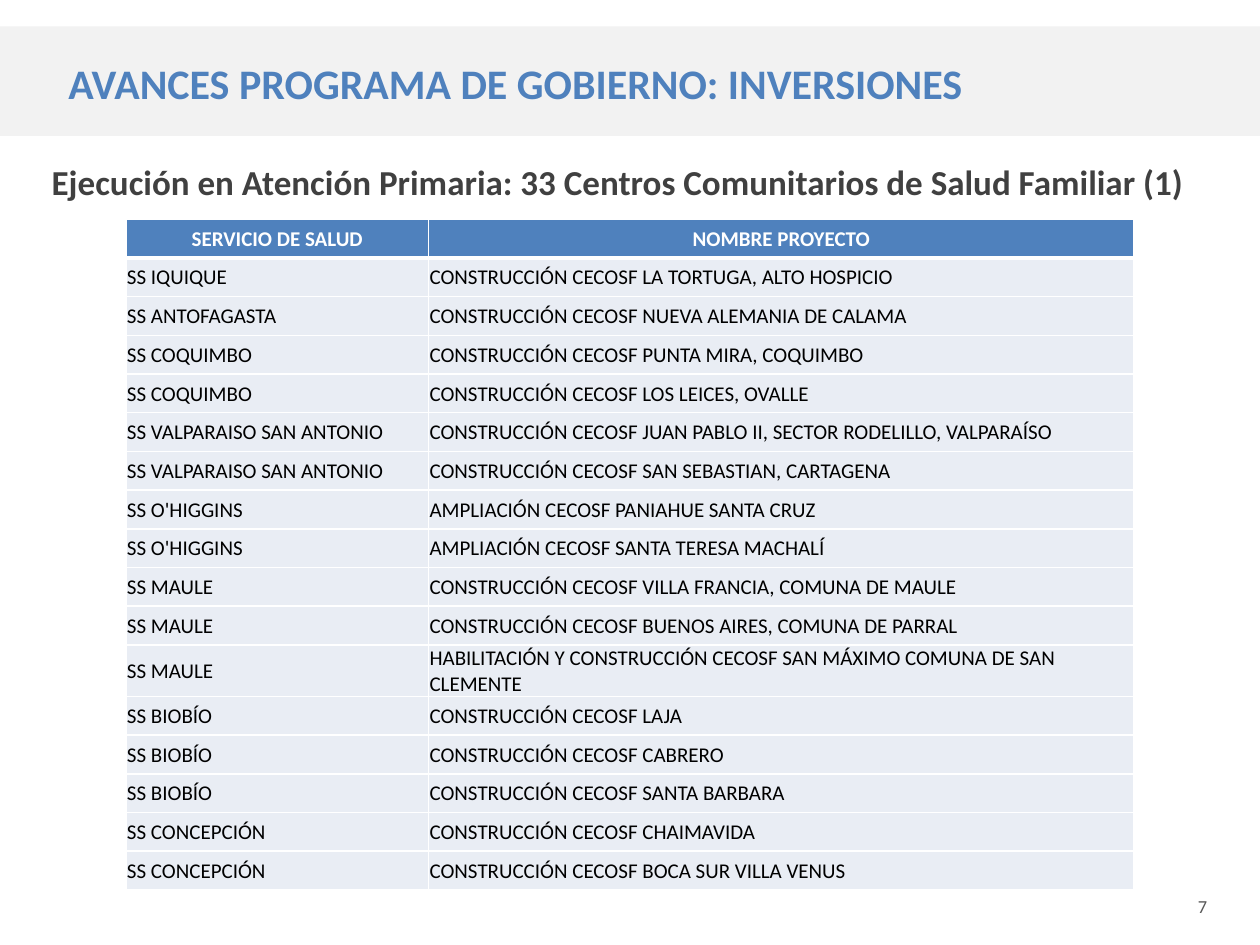
from typing import NamedTuple

from lxml.etree import SubElement
from pptx import Presentation
from pptx.dml.color import RGBColor
from pptx.enum.text import MSO_ANCHOR, MSO_AUTO_SIZE, PP_ALIGN
from pptx.oxml.ns import qn
from pptx.util import Cm, Pt

BLUE = RGBColor(0x4F, 0x81, 0xBD)
PALE = RGBColor(0xE9, 0xED, 0xF4)
BAND = RGBColor(0xF2, 0xF2, 0xF2)
DARK = RGBColor(0x40, 0x40, 0x40)
GRAY = RGBColor(0x59, 0x59, 0x59)
BLACK = RGBColor(0, 0, 0)
WHITE = RGBColor(0xFF, 0xFF, 0xFF)

ROW = 0.78
TALL = 1.04  # a row whose project name takes two lines
WRAP = 64  # letters that fit on one line of the project column


class Work(NamedTuple):
    service: str
    project: str


HEAD = Work("SERVICIO DE SALUD", "NOMBRE PROYECTO")
WORKS = [
    Work("SS IQUIQUE", "CONSTRUCCIÓN CECOSF LA TORTUGA, ALTO HOSPICIO"),
    Work("SS ANTOFAGASTA", "CONSTRUCCIÓN CECOSF NUEVA ALEMANIA DE CALAMA"),
    Work("SS COQUIMBO", "CONSTRUCCIÓN CECOSF PUNTA MIRA, COQUIMBO"),
    Work("SS COQUIMBO", "CONSTRUCCIÓN CECOSF LOS LEICES, OVALLE"),
    Work("SS VALPARAISO SAN ANTONIO",
         "CONSTRUCCIÓN CECOSF JUAN PABLO II, SECTOR RODELILLO, VALPARAÍSO"),
    Work("SS VALPARAISO SAN ANTONIO", "CONSTRUCCIÓN CECOSF SAN SEBASTIAN, CARTAGENA"),
    Work("SS O'HIGGINS", "AMPLIACIÓN CECOSF PANIAHUE SANTA CRUZ"),
    Work("SS O'HIGGINS", "AMPLIACIÓN CECOSF SANTA TERESA MACHALÍ"),
    Work("SS MAULE", "CONSTRUCCIÓN CECOSF VILLA FRANCIA, COMUNA DE MAULE"),
    Work("SS MAULE", "CONSTRUCCIÓN CECOSF BUENOS AIRES, COMUNA DE PARRAL"),
    Work("SS MAULE",
         "HABILITACIÓN Y CONSTRUCCIÓN CECOSF SAN MÁXIMO COMUNA DE SAN CLEMENTE"),
    Work("SS BIOBÍO", "CONSTRUCCIÓN CECOSF LAJA"),
    Work("SS BIOBÍO", "CONSTRUCCIÓN CECOSF CABRERO"),
    Work("SS BIOBÍO", "CONSTRUCCIÓN CECOSF SANTA BARBARA"),
    Work("SS CONCEPCIÓN", "CONSTRUCCIÓN CECOSF CHAIMAVIDA"),
    Work("SS CONCEPCIÓN", "CONSTRUCCIÓN CECOSF BOCA SUR VILLA VENUS"),
]


def write(frame, text: str, *, size: float, color: RGBColor, bold: bool = False,
          align: PP_ALIGN = PP_ALIGN.LEFT) -> None:
    frame.text = text
    para = frame.paragraphs[0]
    para.alignment = align
    para.space_before = Pt(0)
    font = para.runs[0].font
    font.name, font.size, font.bold = "Calibri", Pt(size), bold
    font.color.rgb = color


def rule(cell, base: float) -> None:
    """Draw white lines round a cell; base is the width of the lower one."""
    props = cell._tc.get_or_add_tcPr()
    for side, width in (("L", 1), ("R", 1), ("T", 1), ("B", base)):
        line = SubElement(props, qn(f"a:ln{side}"), w=str(Pt(width)))
        SubElement(SubElement(line, qn("a:solidFill")), qn("a:srgbClr"), val=str(WHITE))


def fill_row(table, index: int, work: Work) -> None:
    head = index == 0
    table.rows[index].height = Cm(TALL if len(work.project) > WRAP else ROW)
    for cell, text in zip(table.rows[index].cells, work):
        write(cell.text_frame, text, size=12, color=WHITE if head else BLACK, bold=head,
              align=PP_ALIGN.CENTER if head else PP_ALIGN.LEFT)
        cell.vertical_anchor = MSO_ANCHOR.MIDDLE
        cell.margin_left = cell.margin_right = cell.margin_top = Cm(0.02)
        cell.margin_bottom = 0
        rule(cell, 3 if head else 1)
        cell.fill.solid()
        cell.fill.fore_color.rgb = BLUE if head else PALE


def add_title(slide, text: str) -> None:
    title = slide.shapes.title
    title.left, title.top, title.width, title.height = 0, Cm(0.53), Cm(25.4), Cm(2.21)
    title.fill.solid()
    title.fill.fore_color.rgb = BAND
    frame = title.text_frame
    frame.auto_size = MSO_AUTO_SIZE.NONE
    frame.vertical_anchor = MSO_ANCHOR.MIDDLE
    frame.margin_left = Cm(1.38)
    frame.margin_top = Cm(0.2)
    write(frame, text, size=24, color=BLUE, bold=True)


def add_table(slide) -> None:
    rows = [HEAD, *WORKS]
    table = slide.shapes.add_table(len(rows), 2, Cm(2.54), Cm(4.42), Cm(20.32),
                                   Cm(ROW * len(rows))).table
    table.horz_banding = False
    table.columns[0].width, table.columns[1].width = Cm(6.1), Cm(14.22)
    for index, work in enumerate(rows):
        fill_row(table, index, work)


def main() -> None:
    deck = Presentation()
    deck.slide_width, deck.slide_height = Cm(25.4), Cm(19.05)
    slide = deck.slides.add_slide(deck.slide_layouts[5])
    add_title(slide, "AVANCES PROGRAMA DE GOBIERNO: INVERSIONES")

    lead = slide.shapes.add_textbox(Cm(0.43), Cm(3.12), Cm(24.05), Cm(1.3)).text_frame
    lead.word_wrap = True
    write(lead, "Ejecución en Atención Primaria: 33 Centros Comunitarios de Salud Familiar (1)",
          size=20, color=DARK, bold=True, align=PP_ALIGN.CENTER)

    add_table(slide)

    number = slide.shapes.add_textbox(Cm(23.9), Cm(17.93), Cm(1.22), Cm(0.74)).text_frame
    number.word_wrap = True
    write(number, "7", size=10.5, color=GRAY)
    deck.save("out.pptx")


if __name__ == "__main__":
    main()
